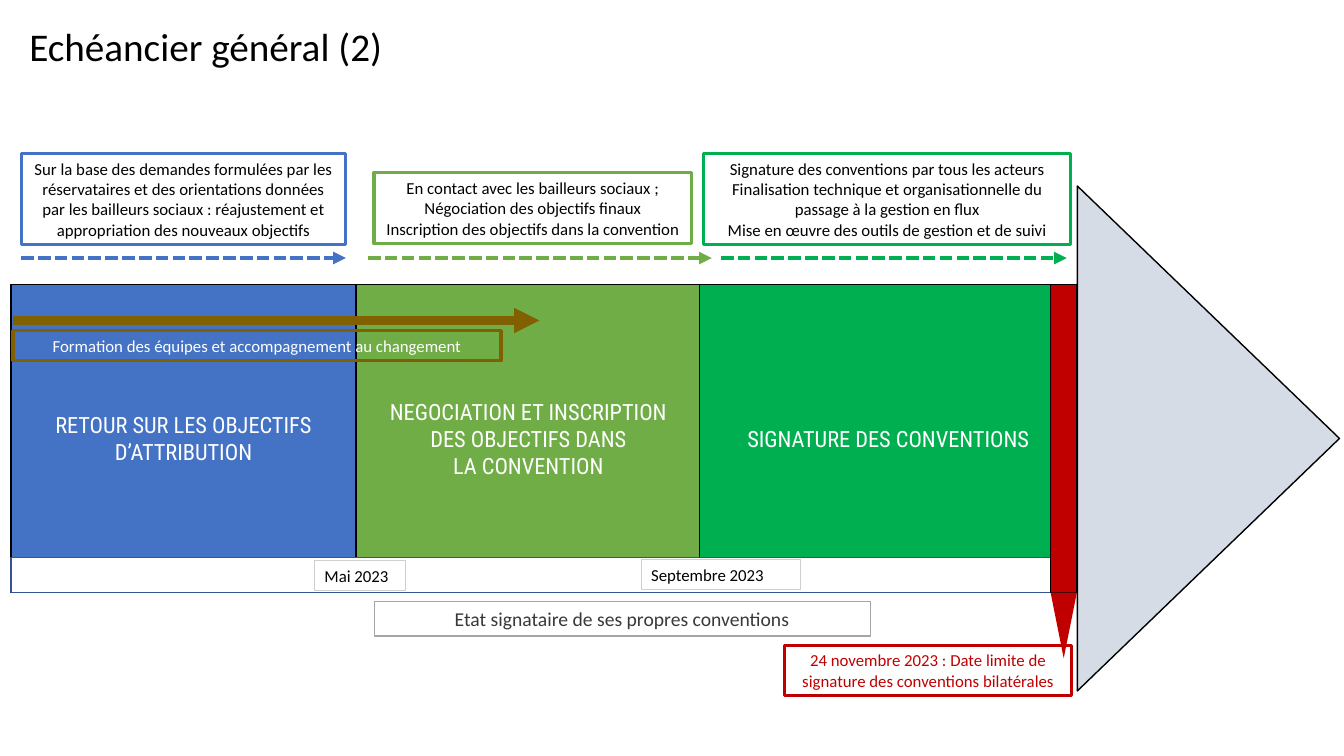
"""Build the slide of the general timetable, with three phases and a deadline."""
from pptx import Presentation
from pptx.dml.color import RGBColor
from pptx.enum import dml, shapes, text
from pptx.oxml.ns import qn
from pptx.util import Pt
from lxml import etree

WHITE = RGBColor(0xFF, 0xFF, 0xFF)
BLACK = RGBColor(0x00, 0x00, 0x00)
BLUE = RGBColor(0x44, 0x72, 0xC4)
NAVY = RGBColor(0x32, 0x54, 0x91)
OLIVE = RGBColor(0x70, 0xAD, 0x47)
GREEN = RGBColor(0x00, 0xB0, 0x50)
BROWN = RGBColor(0x80, 0x60, 0x00)
RED = RGBColor(0xC0, 0x00, 0x00)
PALE = RGBColor(0xD6, 0xDC, 0xE5)
SILVER = RGBColor(0xD0, 0xCE, 0xCE)
GREY = RGBColor(0xA5, 0xA5, 0xA5)
DARK = RGBColor(0x3B, 0x38, 0x38)

PX = 9144
BODY, HEADING = "Calibri", "Roboto Condensed"
BAND_TOP, BAND_HEIGHT = 282, 306
ARROW_Y = 256
DEADLINE_LEFT, DEADLINE_WIDTH = 1042, 26

TITLE = "Echéancier général (2)"
# (left, width, colour, heading, note box, note lines, arrow ends)
PHASES = [
    (11, 342, BLUE, ["RETOUR SUR LES OBJECTIFS D’ATTRIBUTION"],
     (21, 152, 322, 91),
     ["Sur la base des demandes formulées par les réservataires et des "
      "orientations données par les bailleurs sociaux : réajustement et "
      "appropriation des nouveaux objectifs"],
     (21, 343)),
    (353, 342, OLIVE,
     ["NEGOCIATION ET INSCRIPTION", "DES OBJECTIFS DANS", "LA CONVENTION"],
     (371, 171, 315, 71),
     ["En contact avec les bailleurs sociaux ;",
      "Négociation des objectifs finaux",
      "Inscription des objectifs dans la convention"],
     (365, 706)),
    (694, 374, GREEN, ["SIGNATURE DES CONVENTIONS"],
     (698, 152, 364, 91),
     ["Signature des conventions par tous les acteurs",
      "Finalisation technique et organisationnelle du passage à la gestion en flux",
      "Mise en œuvre des outils de gestion et de suivi"],
     (715, 1058)),
]
# (box, line colour, line width, text, size, text colour)
LABELS = [
    ((371, 597, 492, 34), GREY, 0.75,
     "Etat signataire de ses propres conventions", 14, DARK),
    ((13, 328, 484, 30), BROWN, 2.25,
     "Formation des équipes et accompagnement au changement", 12, WHITE),
    ((778, 640, 285, 50), RED, 2.25,
     "24 novembre 2023 : Date limite de signature des conventions bilatérales", 12, RED),
]
DATES = [((312, 556, 90, 30), "Mai 2023"), ((636, 555, 158, 30), "Septembre 2023")]

prs = Presentation()
prs.slide_width, prs.slide_height = 1333 * PX, 750 * PX
slide = prs.slides.add_slide(prs.slide_layouts[5])


def write(sp, lines, size, color, font=BODY, align=text.PP_ALIGN.CENTER):
    tf = sp.text_frame
    tf.word_wrap = True
    tf.auto_size = text.MSO_AUTO_SIZE.NONE
    tf.vertical_anchor = text.MSO_ANCHOR.MIDDLE
    for i, line in enumerate(lines):
        p = tf.add_paragraph() if i else tf.paragraphs[0]
        p.alignment = align
        r = p.add_run()
        r.text = line
        r.font.name, r.font.size = font, Pt(size)
        r.font.color.rgb = color


def add_block(box, fill=None, line=None, width=1, kind=shapes.MSO_SHAPE.RECTANGLE, turn=0):
    sp = slide.shapes.add_shape(kind, *(v * PX for v in box))
    sp.shadow.inherit = False
    sp.rotation = turn
    if fill is None:
        sp.fill.background()
    else:
        sp.fill.solid()
        sp.fill.fore_color.rgb = fill
    if line is None:
        sp.line.fill.background()
    else:
        sp.line.color.rgb, sp.line.width = line, Pt(width)
    return sp


def add_arrow(start, end, y, color, width, dash=None):
    arrow = slide.shapes.add_connector(
        shapes.MSO_CONNECTOR.STRAIGHT, start * PX, y * PX, end * PX, y * PX)
    arrow.line.color.rgb, arrow.line.width = color, Pt(width)
    if dash is not None:
        arrow.line.dash_style = dash
    etree.SubElement(arrow.line._get_or_add_ln(), qn("a:tailEnd"), type="triangle")
    etree.SubElement(arrow._element.spPr, qn("a:effectLst"))


title = slide.shapes.title
title.left, title.top, title.width, title.height = (v * PX for v in (19, 17, 478, 57))
write(title, [TITLE], 28, BLACK, align=text.PP_ALIGN.LEFT)

triangle = shapes.MSO_SHAPE.ISOSCELES_TRIANGLE
add_block((11, BAND_TOP, 1158, BAND_HEIGHT), WHITE, BLACK)
add_block((948, 305, 501, 260), PALE, BLACK, kind=triangle, turn=90)

for left, width, color, heading, note_box, note, (start, end) in PHASES:
    phase = add_block((left, BAND_TOP, width, BAND_HEIGHT), color, BLACK)
    write(phase, heading, 16, WHITE, HEADING)
    add_arrow(start, end, ARROW_Y, color, 3, dml.MSO_LINE.SQUARE_DOT)
    write(add_block(note_box, line=color, width=2.25), note, 12, BLACK)

add_arrow(13, 535, 318, BROWN, 6)
for box, line, width, label, size, color in LABELS:
    write(add_block(box, line=line, width=width), [label], size, color)

add_block((11, 553, 1057, 35), WHITE, NAVY)
add_block((DEADLINE_LEFT, BAND_TOP, DEADLINE_WIDTH, BAND_HEIGHT), RED, BLACK)
add_block((DEADLINE_LEFT, BAND_TOP + BAND_HEIGHT, DEADLINE_WIDTH, 65), RED,
          kind=triangle, turn=180)
for box, date in DATES:
    write(add_block(box, line=SILVER, width=0.75), [date], 12, BLACK,
          align=text.PP_ALIGN.LEFT)

prs.save("out.pptx")
